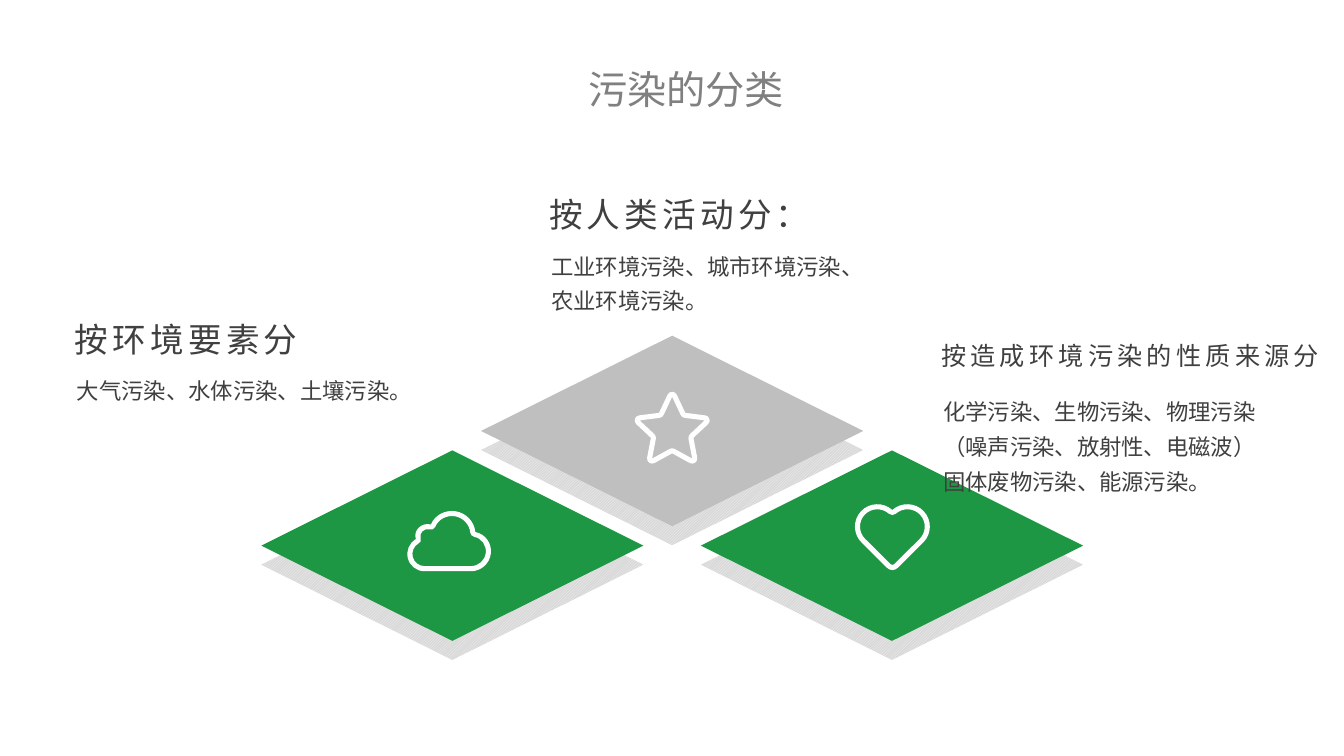
from dataclasses import dataclass
from math import ceil, cos, dist, radians, sin, tan

from lxml import etree
from pptx import Presentation
from pptx.dml.color import RGBColor
from pptx.dml.fill import FillFormat
from pptx.enum.dml import MSO_PATTERN
from pptx.enum.shapes import MSO_SHAPE
from pptx.enum.text import MSO_ANCHOR, MSO_AUTO_SIZE, PP_ALIGN
from pptx.oxml.ns import qn
from pptx.shapes.autoshape import Shape
from pptx.shapes.shapetree import GroupShapes, SlideShapes
from pptx.text.text import TextFrame
from pptx.util import Cm, Pt

DIAMOND = MSO_SHAPE.DIAMOND
HATCH = MSO_PATTERN.LIGHT_UPWARD_DIAGONAL
CENTER = PP_ALIGN.CENTER
TOP = MSO_ANCHOR.TOP
GROW = MSO_AUTO_SIZE.SHAPE_TO_FIT_TEXT


@dataclass(frozen=True)
class Theme:
    font: str = "Noto Sans CJK SC"
    title: str = "808080"
    text: str = "404040"
    green: str = "1D9744"
    gray: str = "BFBFBF"
    white: str = "FFFFFF"
    hatch: str = "F2F2F2"
    shade: str = "D9D9D9"
    title_size: int = 28
    head_size: int = 24
    small_size: int = 18
    body_size: int = 16
    track: int = 300
    leading: float = 1.3


@dataclass(frozen=True)
class Arc:
    """Part of an icon's midline: millimetres from the tile's middle, degrees.

    A negative turn marks a hollow corner.
    """
    x: float
    y: float
    radius: float
    start: float
    turn: float


@dataclass(frozen=True)
class Tile:
    x: float
    y: float
    color: str
    icon: list[Arc]


@dataclass(frozen=True)
class Note:
    x: float
    y: float
    width: float
    size: int
    head: str
    gap: float
    height: float
    body: str


THEME = Theme()
WIDTH, HEIGHT, DROP = 9.63, 4.8, 0.48
MID_X, MID_Y, STEP_X, STEP_Y = 16.94, 10.86, 5.54, 2.89
HALF = 0.64  # half the icon stroke, mm
NEAR = 0.4  # ends closer than this, mm, need no joining line
SWEEP = 130  # widest angle of one curve
POINTS = 5


def star() -> list[Arc]:
    arcs = []
    for i in range(POINTS):
        tip = 360 * i / POINTS - 90
        notch = tip + 180 / POINTS
        for angle, reach, start, turn in ((tip, 8.6, tip - 65, 130),
                                          (notch, 5.64, notch + 209, -58)):
            a = radians(angle)
            arcs.append(Arc(reach * cos(a), reach * sin(a), HALF, start, turn))
    return arcs


CLOUD = [
    Arc(-7, 2.1, 3.7, 90, 150),
    Arc(-9.18, -1.5, HALF, 60, -78),
    Arc(-6.2, -2.3, 2.5, 162, 123),
    Arc(-5.45, -5.28, HALF, 105, -81),
    Arc(-0.1, -2.8, 5.3, 204, 150),
    Arc(5.78, -3.48, HALF, 174, -72),
    Arc(4.7, 1.4, 4.4, 282, 168),
]
HEART = [
    Arc(-3.7, -4.8, 5, 135, 177),
    Arc(0.1, -8.99, HALF, 132, -84),
    Arc(3.9, -4.8, 5, 228, 177),
    Arc(0.1, 4.2, 1.3, 45, 90),
]
TILES = [
    Tile(MID_X - STEP_X, MID_Y + STEP_Y, THEME.green, CLOUD),
    Tile(MID_X, MID_Y, THEME.gray, star()),
    Tile(MID_X + STEP_X, MID_Y + STEP_Y, THEME.green, HEART),
]
NOTES = [
    Note(13.59, 4.77, 7.24, THEME.head_size, "按人类活动分：",
         1.27, 1.96, "工业环境污染、城市环境污染、农业环境污染。"),
    Note(1.64, 7.92, 6.81, THEME.head_size, "按环境要素分",
         1.26, 1.07, "大气污染、水体污染、土壤污染。"),
    Note(23.47, 8.44, 10.24, THEME.small_size, "按造成环境污染的性质来源分", 1.27, 2.92,
         "化学污染、生物污染、物理污染（噪声污染、放射性、电磁波）固体废物污染、能源污染。"),
]


def rgb(color: str) -> RGBColor:
    return RGBColor.from_string(color)


def paint(fill: FillFormat, color: str) -> None:
    fill.solid()
    fill.fore_color.rgb = rgb(color)


def strip(shape: Shape) -> None:
    """Take away the outline and shadow."""
    shape.line.fill.background()
    shape.shadow.inherit = False


def write(frame: TextFrame, text: str, size: int, color: str, track: int = 0) -> None:
    frame.auto_size = GROW
    run = frame.paragraphs[0].add_run()
    run.text = text
    run.font.size = Pt(size)
    run.font.name = THEME.font
    run.font.color.rgb = rgb(color)
    props = run.font._element
    etree.SubElement(props, qn("a:ea"), typeface=THEME.font)
    if track:
        props.set("spc", str(track))


def trace(tile: Tile, shift: float) -> list[tuple[int, int]]:
    """A start and then three Bezier points a curve, moved outward by shift."""
    dots = []
    for arc in tile.icon:
        r = arc.radius + (shift if arc.turn > 0 else -shift)
        count = ceil(abs(arc.turn) / SWEEP)
        step = radians(arc.turn) / count
        pull = r * 4 / 3 * tan(step / 4)

        def spot(angle: float, along: float = 0) -> tuple[float, float]:
            return (arc.x + r * cos(angle) - along * sin(angle),
                    arc.y + r * sin(angle) + along * cos(angle))

        a = radians(arc.start)
        first = spot(a)
        if not dots:
            dots.append(first)
        elif dist(dots[-1], first) > NEAR:
            dots += [dots[-1], first, first]
        if r < NEAR:
            continue
        for _ in range(count):
            dots += [spot(a, pull), spot(a + step, -pull), spot(a + step)]
            a += step
    return [(Cm(tile.x + x / 10), Cm(tile.y + y / 10)) for x, y in dots]


def bend(shape: Shape) -> None:
    """Turn each three line steps of the outline into one curve."""
    lines = list(shape._element.iter(qn("a:lnTo")))
    for trio in zip(lines[::3], lines[1::3], lines[2::3]):
        curve = etree.Element(qn("a:cubicBezTo"))
        trio[0].addprevious(curve)
        for line in trio:
            curve.append(line[0])
            line.getparent().remove(line)


def draw_icon(shapes: GroupShapes, tile: Tile) -> None:
    outer = trace(tile, HALF)
    inner = trace(tile, -HALF)[::-1]
    pen = shapes.build_freeform(*outer[0], scale=1.0)
    pen.add_line_segments(outer[1:], close=True)
    pen.move_to(*inner[0])
    pen.add_line_segments(inner[1:], close=True)
    icon = pen.convert_to_shape()
    bend(icon)
    paint(icon.fill, THEME.white)
    strip(icon)


def draw_tile(shapes: GroupShapes, tile: Tile) -> None:
    left, top = tile.x - WIDTH / 2, tile.y - HEIGHT / 2
    base, face = (
        shapes.add_shape(DIAMOND, Cm(left), Cm(top + drop), Cm(WIDTH), Cm(HEIGHT))
        for drop in (DROP, 0))
    base.fill.patterned()
    base.fill.pattern = HATCH
    base.fill.fore_color.rgb = rgb(THEME.hatch)
    base.fill.back_color.rgb = rgb(THEME.shade)
    paint(face.fill, tile.color)
    strip(base)
    strip(face)


def draw_note(shapes: SlideShapes, note: Note) -> None:
    body = shapes.add_textbox(Cm(note.x + 0.05), Cm(note.y + note.gap),
                              Cm(8.59), Cm(note.height)).text_frame
    body.word_wrap = True
    body.paragraphs[0].line_spacing = THEME.leading
    write(body, note.body, THEME.body_size, THEME.text)
    tall = 1.27 if note.size == THEME.head_size else 1.02
    head = shapes.add_textbox(Cm(note.x), Cm(note.y), Cm(note.width), Cm(tall)).text_frame
    head.word_wrap = False
    write(head, note.head, note.size, THEME.text, THEME.track)


def main() -> None:
    deck = Presentation()
    deck.slide_width, deck.slide_height = Cm(33.87), Cm(19.05)
    slide = deck.slides.add_slide(deck.slide_layouts[5])
    title = slide.shapes.title
    title.left, title.top = Cm(13.43), Cm(1.52)
    title.width, title.height = Cm(7.72), Cm(1.45)
    title.text_frame.vertical_anchor = TOP
    title.text_frame.paragraphs[0].alignment = CENTER
    write(title.text_frame, "污染的分类", THEME.title_size, THEME.title)
    group = slide.shapes.add_group_shape()
    for draw in (draw_tile, draw_icon):
        for tile in TILES:
            draw(group.shapes, tile)
    for note in NOTES:
        draw_note(slide.shapes, note)
    deck.save("out.pptx")


if __name__ == "__main__":
    main()
